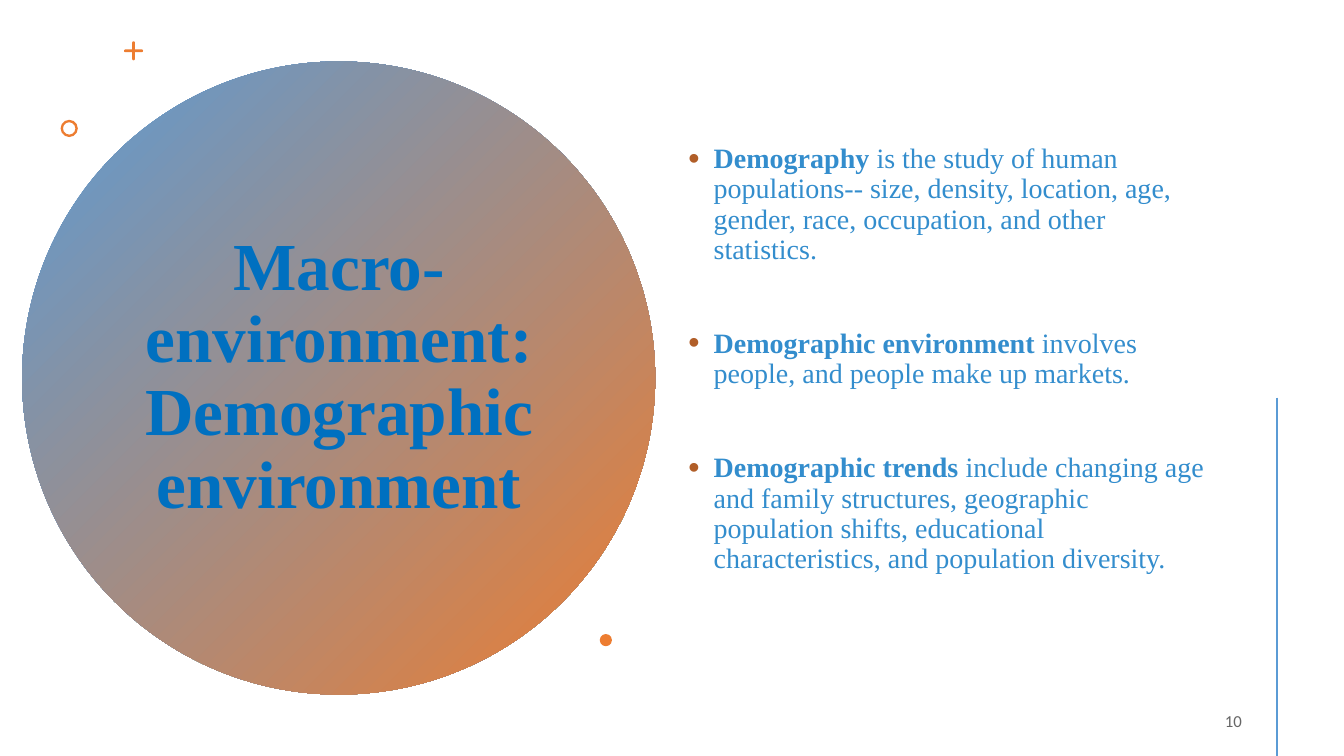
import math
import pptx
import pptx.util
import pptx.dml.color
import pptx.enum.shapes
import pptx.enum.text
import pptx.oxml.ns
import lxml.etree

Pt = pptx.util.Pt
KIND = pptx.enum.shapes.MSO_SHAPE
ALIGN = pptx.enum.text.PP_ALIGN
SERIF = "Times New Roman"
HUES = {"blue": "5B9BD5", "orange": "ED7D31", "title": "0070C0",
        "body": "338DCD", "bullet": "B15E28", "number": "666666"}
POINTS = [
    ("Demography ", "is the study of human populations-- size, density, location, "
     "age, gender, race, occupation, and other statistics."),
    ("Demographic environment ", "involves people, and people make up markets."),
    ("Demographic trends ", "include changing age and family structures, geographic "
     "population shifts, educational characteristics, and population diversity."),
]


def hue(name):
    return pptx.dml.color.RGBColor.from_string(HUES[name])


def plain(shape, color="orange"):
    shape.shadow.inherit = False
    shape.fill.solid()
    shape.fill.fore_color.rgb = hue(color)
    shape.line.fill.background()
    return shape


def round_shape(slide, kind, left, top, size):
    return plain(slide.shapes.add_shape(kind, Pt(left), Pt(top), Pt(size), Pt(size)))


def add_plus(slide, x, y, arm, half):
    """Plus sign whose four arms end in half circles."""
    dots = []
    for turn in range(0, 360, 90):
        a = math.radians(turn)
        cx, cy = x + (arm - half) * math.cos(a), y + (arm - half) * math.sin(a)
        for step in range(-90, 91, 30):
            b = a + math.radians(step)
            dots.append((Pt(cx + half * math.cos(b)), Pt(cy + half * math.sin(b))))
        b = a + math.pi / 4
        reach = half * math.sqrt(2)
        dots.append((Pt(x + reach * math.cos(b)), Pt(y + reach * math.sin(b))))
    form = slide.shapes.build_freeform(*dots[0])
    form.add_line_segments(dots[1:], close=True)
    plain(form.convert_to_shape())


def add_box(slide, left, top, width, height):
    box = slide.shapes.add_textbox(Pt(left), Pt(top), Pt(width), Pt(height))
    frame = box.text_frame
    frame.word_wrap = True
    frame.vertical_anchor = pptx.enum.text.MSO_ANCHOR.MIDDLE
    return frame


def add_run(para, text, size, color, bold=False, face=SERIF):
    run = para.add_run()
    run.text = text
    font = run.font
    font.name, font.size, font.bold = face, Pt(size), bold
    font.color.rgb = hue(color)


def add_bullet(para):
    props = para._p.get_or_add_pPr()
    props.set("marL", str(Pt(22.5)))
    props.set("indent", str(-Pt(18)))
    qn = pptx.oxml.ns.qn
    tint = lxml.etree.SubElement(props, qn("a:buClr"))
    lxml.etree.SubElement(tint, qn("a:srgbClr"), val=HUES["bullet"])
    lxml.etree.SubElement(props, qn("a:buSzPct"), val="115000")
    lxml.etree.SubElement(props, qn("a:buFont"), typeface="Arial")
    lxml.etree.SubElement(props, qn("a:buChar"), char="•")


def add_points(slide):
    frame = add_box(slide, 480.2, 41, 391.7, 459.4)
    frame.margin_bottom = Pt(31.3)
    for i, (term, rest) in enumerate(POINTS):
        para = frame.add_paragraph() if i else frame.paragraphs[0]
        add_bullet(para)
        para.line_spacing = 0.9
        para.space_before = Pt(45.6 if i else 0)
        add_run(para, term, 20, "body", bold=True)
        add_run(para, rest, 20, "body")


def add_rule(slide, x, top, end):
    rule = slide.shapes.add_connector(
        pptx.enum.shapes.MSO_CONNECTOR.STRAIGHT, Pt(x), Pt(top), Pt(x), Pt(end))
    rule.line.color.rgb = hue("blue")
    rule.line.width = Pt(2)
    lxml.etree.SubElement(rule._element.spPr, pptx.oxml.ns.qn("a:effectLst"))


def main():
    deck = pptx.Presentation()
    deck.slide_width, deck.slide_height = Pt(960), Pt(540)
    slide = deck.slides.add_slide(deck.slide_layouts[6])

    # Large disc with its title
    disc = round_shape(slide, KIND.OVAL, 15.8, 43.9, 452.2)
    disc.fill.gradient()
    disc.fill.gradient_angle = 315
    for stop, name, place in zip(disc.fill.gradient_stops, ("blue", "orange"), (0, 1)):
        stop.color.rgb = hue(name)
        stop.position = place
    title = add_box(slide, 47.5, 101.5, 389.5, 336.2).paragraphs[0]
    title.alignment = ALIGN.CENTER
    title.line_spacing = 0.9
    add_run(title, "Macro-environment: Demographic environment", 48, "title", bold=True)

    # Small ornaments
    add_plus(slide, 95.4, 36.3, 6.8, 0.95)
    ring = round_shape(slide, KIND.DONUT, 43.3, 85.6, 12.3)
    ring.adjustments[0] = 0.14
    round_shape(slide, KIND.OVAL, 428.4, 452.9, 8.7)

    # Bullet points, slide number and side rule
    add_points(slide)
    number = add_box(slide, 678.2, 500.4, 216, 28.8).paragraphs[0]
    number.alignment = ALIGN.RIGHT
    add_run(number, "10", 12, "number", face="Calibri")
    add_rule(slide, 912.2, 284, 540)

    deck.save("out.pptx")


if __name__ == "__main__":
    main()
